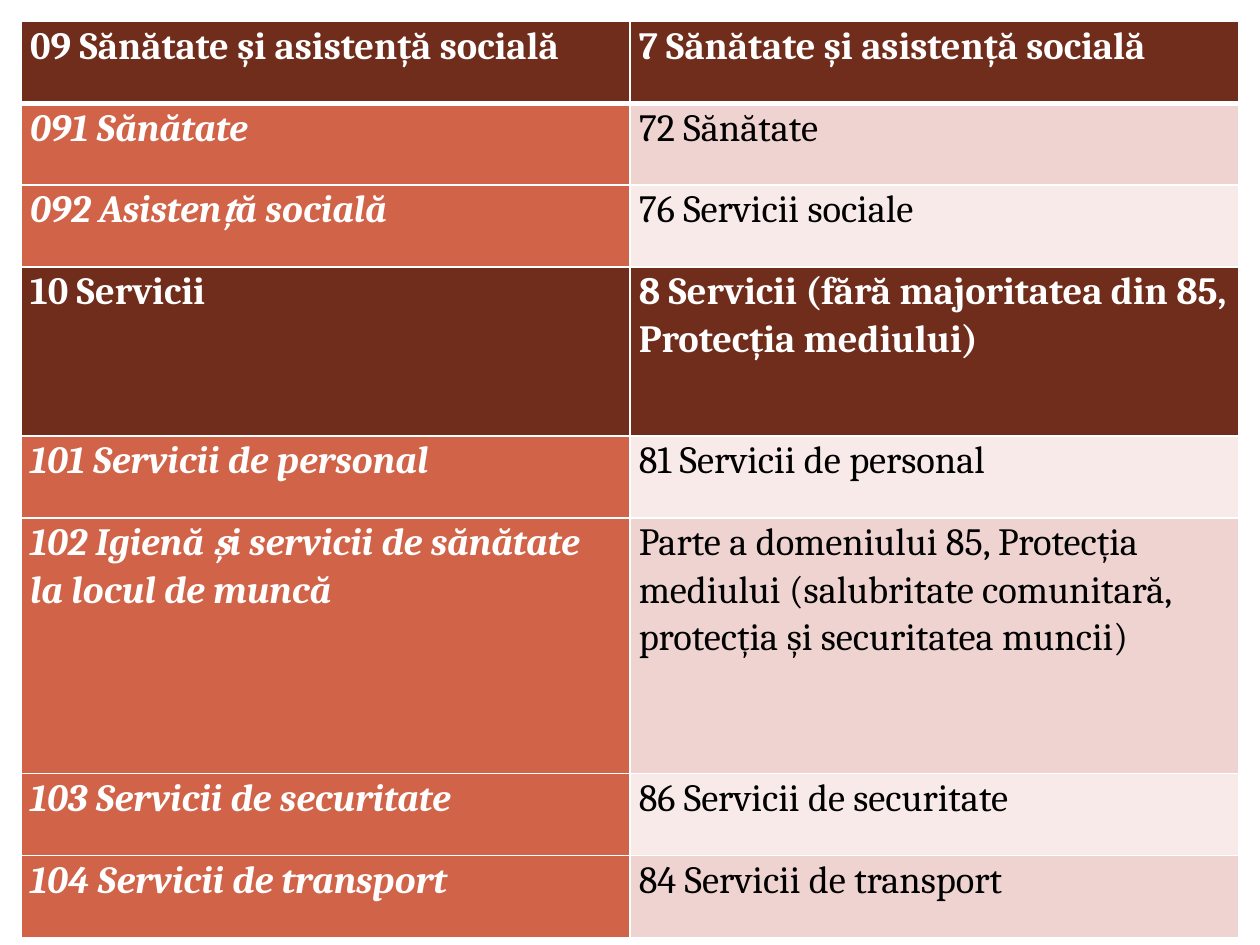
from dataclasses import dataclass

from lxml import etree
from pptx import Presentation
from pptx.dml.color import RGBColor
from pptx.enum import shapes
from pptx.oxml import ns
from pptx.util import Inches, Pt

COLOURS = {
    "backdrop": "C5D1D7",
    "white": "FFFFFF",
    "black": "000000",
    "heading": "712D1C",
    "code": "D16349",
    "odd": "EED3D0",
    "even": "F7EAE9",
}
FONT = "Cambria"
MARGIN = 0.17
COLUMN_WIDTH = 4.83


@dataclass
class Domain:
    new: str
    old: str
    heading: bool = False
    height: float = 0.65


@dataclass
class Strip:
    left: float
    top: float
    width: float
    height: float


DOMAINS = [
    Domain("09 Sănătate și asistență socială", "7 Sănătate și asistență socială", True),
    Domain("091 Sănătate", "72 Sănătate"),
    Domain("092 Asistență socială", "76 Servicii sociale"),
    Domain("10 Servicii", "8 Servicii (fără majoritatea din 85, Protecția mediului)", True, 1.34),
    Domain("101 Servicii de personal", "81 Servicii de personal"),
    Domain(
        "102 Igienă și servicii de sănătate la locul de muncă",
        "Parte a domeniului 85, Protecția mediului "
        "(salubritate comunitară, protecția și securitatea muncii)",
        height=2.03,
    ),
    Domain("103 Servicii de securitate", "86 Servicii de securitate"),
    Domain("104 Servicii de transport", "84 Servicii de transport"),
]

FRAME = [
    Strip(0, 7.33, 10, MARGIN),
    Strip(0, 0, 10, 1.52),
    Strip(0, 0, MARGIN, 7.5),
    Strip(9.83, 0, MARGIN, 7.5),
]


def rgb(name: str) -> RGBColor:
    return RGBColor.from_string(COLOURS[name])


def draw_strip(slide, strip: Strip) -> None:
    edge = slide.shapes.add_shape(
        shapes.MSO_SHAPE.RECTANGLE,
        Inches(strip.left), Inches(strip.top), Inches(strip.width), Inches(strip.height),
    )
    edge.shadow.inherit = False
    edge.fill.solid()
    edge.fill.fore_color.rgb = rgb("white")
    edge.line.fill.background()


def set_borders(cell, top: float, bottom: float) -> None:
    properties = cell._tc.get_or_add_tcPr()
    widths = {"a:lnL": 1, "a:lnR": 1, "a:lnT": top, "a:lnB": bottom}
    for position, (side, width) in enumerate(widths.items()):
        border = etree.Element(ns.qn(side), w=str(Pt(width)))
        fill = etree.SubElement(border, ns.qn("a:solidFill"))
        etree.SubElement(fill, ns.qn("a:srgbClr"), val=COLOURS["white"])
        properties.insert(position, border)


def fill_cell(cell, wording: str, fill: str, colour: str, bold: bool, italic: bool) -> None:
    cell.fill.solid()
    cell.fill.fore_color.rgb = rgb(fill)
    cell.margin_left = cell.margin_right = Inches(0.07)
    cell.margin_top = cell.margin_bottom = 0
    cell.text_frame.text = wording
    paragraph = cell.text_frame.paragraphs[0]
    paragraph.line_spacing = 1.07
    font = paragraph.runs[0].font
    font.name, font.size = FONT, Pt(22)
    font.bold, font.italic = bold, italic
    font.color.rgb = rgb(colour)


def draw_domains(slide, domains: list[Domain]) -> None:
    correspondence = slide.shapes.add_table(
        len(domains), 2, Inches(MARGIN), Inches(MARGIN),
        Inches(2 * COLUMN_WIDTH), Inches(sum(domain.height for domain in domains)),
    ).table
    for column in correspondence.columns:
        column.width = Inches(COLUMN_WIDTH)
    for index, domain in enumerate(domains):
        correspondence.rows[index].height = Inches(domain.height)
        new, old = correspondence.cell(index, 0), correspondence.cell(index, 1)
        if domain.heading:
            fill_cell(new, domain.new, "heading", "white", True, False)
            fill_cell(old, domain.old, "heading", "white", True, False)
        else:
            band = "odd" if index % 2 else "even"
            fill_cell(new, domain.new, "code", "white", True, True)
            fill_cell(old, domain.old, band, "black", False, False)
        for cell in (new, old):
            set_borders(cell, 3 if index == 1 else 1, 3 if index == 0 else 1)


def main() -> None:
    deck = Presentation()
    deck.slide_width, deck.slide_height = Inches(10), Inches(7.5)
    slide = deck.slides.add_slide(deck.slide_layouts[6])
    slide.background.fill.solid()
    slide.background.fill.fore_color.rgb = rgb("backdrop")
    for strip in FRAME:
        draw_strip(slide, strip)
    draw_domains(slide, DOMAINS)
    deck.save("out.pptx")


if __name__ == "__main__":
    main()
